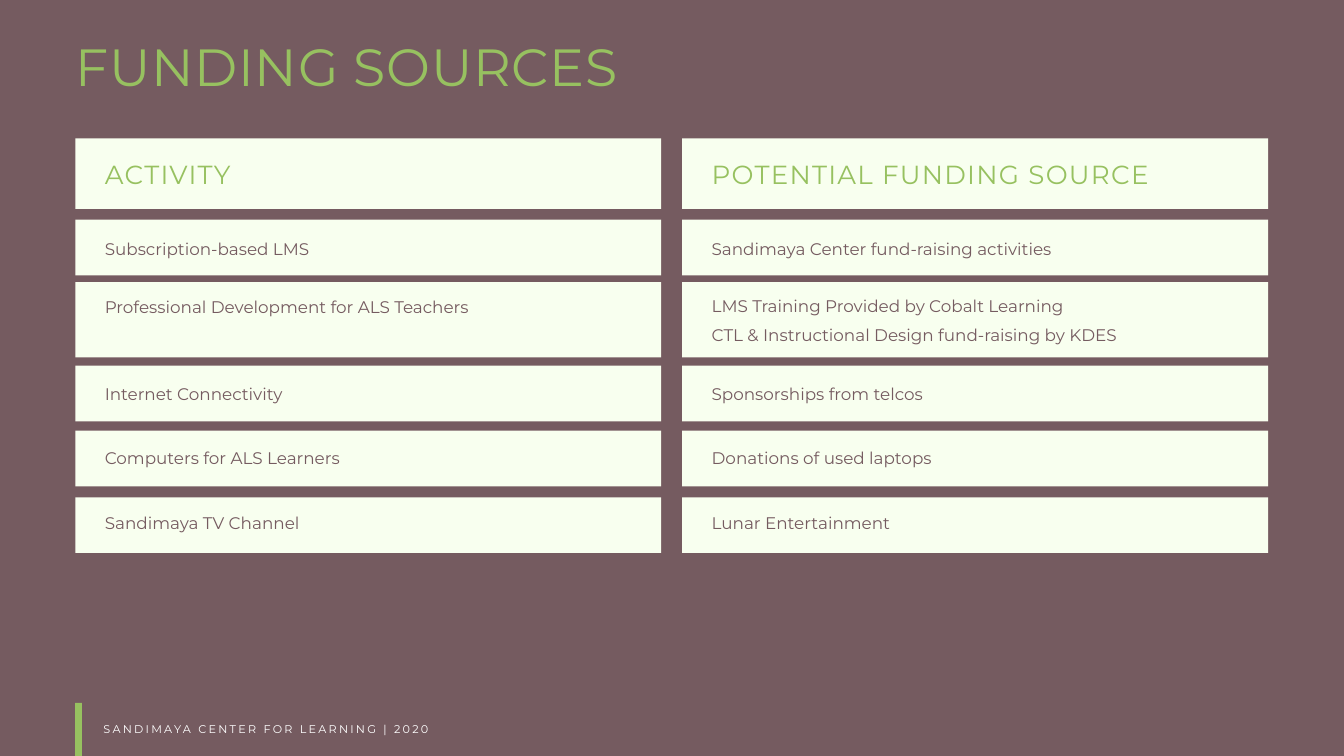
from pptx import Presentation
from pptx.dml.color import RGBColor
from pptx.enum.shapes import MSO_SHAPE
from pptx.enum.text import MSO_ANCHOR, MSO_AUTO_SIZE, PP_ALIGN
from pptx.util import Inches, Pt

COLORS = {"plum": "755B60", "green": "97C160", "cream": "F8FFEF", "white": "FFFFFF"}
FONT = "Montserrat"

TITLE = "FUNDING SOURCES"
FOOTER = "SANDIMAYA CENTER FOR LEARNING | 2020"
HEADINGS = ("ACTIVITY", "POTENTIAL FUNDING SOURCE")

# Card top, card height, then per column: (top of first line, lines)
ROWS = [
    (3.27, 0.83, (3.52, ["Subscription-based LMS"]),
     (3.52, ["Sandimaya Center fund-raising activities"])),
    (4.2, 1.12, (4.39, ["Professional Development for ALS Teachers"]),
     (4.38, ["LMS Training Provided by Cobalt Learning",
             "CTL & Instructional Design fund-raising by KDES"])),
    (5.44, 0.83, (5.69, ["Internet Connectivity"]),
     (5.69, ["Sponsorships from telcos"])),
    (6.41, 0.83, (6.64, ["Computers for ALS Learners"]),
     (6.64, ["Donations of used laptops"])),
    (7.4, 0.83, (7.6, ["Sandimaya TV Channel"]),
     (7.6, ["Lunar Entertainment"])),
]

# Layout in inches
SLIDE_W, SLIDE_H = 20, 11.25
MARGIN = 1.12
CARD_W, GUTTER = 8.72, 0.31
TEXT_INDENT, TEXT_W = 0.44, 6.96
LINE_STEP = 0.42
HEADING_TOP, HEADING_H = 2.06, 1.05
BAR_TOP = 10.46
COLUMNS = [MARGIN + i * (CARD_W + GUTTER) for i in range(2)]


def color(name):
    return RGBColor.from_string(COLORS[name])


def add_block(slide, left, top, width, height, fill):
    block = slide.shapes.add_shape(
        MSO_SHAPE.RECTANGLE, Inches(left), Inches(top), Inches(width), Inches(height))
    block.shadow.inherit = False
    block.fill.solid()
    block.fill.fore_color.rgb = color(fill)
    block.line.fill.background()


def write(shape, text, size, ink, leading, tracking=0):
    """Fill a shape with one line of text; tracking is in points."""
    frame = shape.text_frame
    frame.margin_left = frame.margin_right = frame.margin_top = frame.margin_bottom = 0
    frame.word_wrap = True
    frame.vertical_anchor = MSO_ANCHOR.TOP
    frame.auto_size = MSO_AUTO_SIZE.SHAPE_TO_FIT_TEXT
    line = frame.paragraphs[0]
    line.alignment = PP_ALIGN.LEFT
    line.line_spacing = Pt(leading)
    run = line.add_run()
    run.text = text
    run.font.name = FONT
    run.font.size = Pt(size)
    run.font.color.rgb = color(ink)
    if tracking:
        run.font._element.set("spc", str(round(tracking * 100)))


def add_text(slide, left, top, width, height, *style):
    box = slide.shapes.add_textbox(
        Inches(left), Inches(top), Inches(width), Inches(height))
    write(box, *style)


def main():
    prs = Presentation()
    prs.slide_width, prs.slide_height = Inches(SLIDE_W), Inches(SLIDE_H)
    slide = prs.slides.add_slide(prs.slide_layouts[5])
    slide.background.fill.solid()
    slide.background.fill.fore_color.rgb = color("plum")

    # Title
    title = slide.shapes.title
    title.left, title.top = Inches(MARGIN), Inches(0.67)
    title.width, title.height = Inches(17.6), Inches(0.82)
    write(title, TITLE, 56, "green", 56, 0.8)

    # Column headings
    for left, heading in zip(COLUMNS, HEADINGS):
        add_block(slide, left, HEADING_TOP, CARD_W, HEADING_H, "cream")
        add_text(slide, left + TEXT_INDENT, 2.32, TEXT_W, 0.49,
                 heading, 28, "green", 36.4, 1.4)

    # Activities and their funding sources
    for card_top, card_height, *cells in ROWS:
        for left, (text_top, lines) in zip(COLUMNS, cells):
            add_block(slide, left, card_top, CARD_W, card_height, "cream")
            for i, line in enumerate(lines):
                add_text(slide, left + TEXT_INDENT, text_top + i * LINE_STEP,
                         TEXT_W, 0.32, line, 18, "plum", 23.4)

    # Footer
    add_text(slide, 1.54, 10.71, 7.93, 0.21, FOOTER, 12, "white", 16.8, 2.4)
    add_block(slide, MARGIN, BAR_TOP, 0.1, SLIDE_H - BAR_TOP, "green")

    prs.save("out.pptx")


if __name__ == "__main__":
    main()
